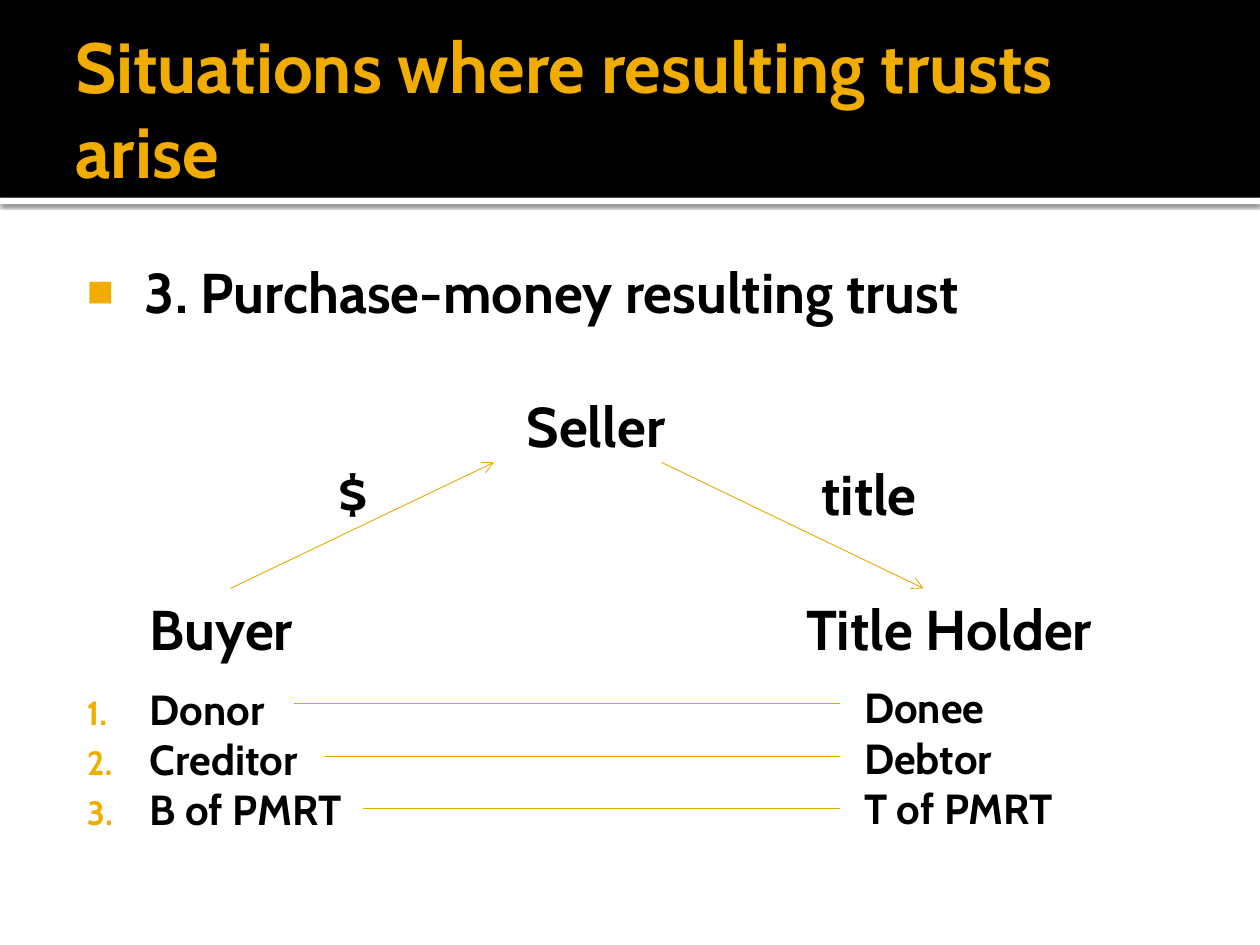
from lxml import etree
from pptx import Presentation
from pptx import util as u
from pptx.dml.color import RGBColor
from pptx.enum import shapes, text
from pptx.oxml.ns import qn

GOLD, BLACK, WHITE, LINE = "F0AD00", "000000", "FFFFFF", "EBA900"


def color(code):
    return RGBColor.from_string(code)


def sub(parent, tag, **attrs):
    return etree.SubElement(parent, qn(tag), {k: str(v) for k, v in attrs.items()})


def write(para, words, size=32, fill=BLACK, font="Cabin", before=0):
    para.alignment = text.PP_ALIGN.LEFT
    para.space_before = u.Pt(before)
    run = para.add_run()
    run.text = words
    run.font.name, run.font.size, run.font.bold = font, u.Pt(size), True
    run.font.color.rgb = color(fill)


def bullet(para, margin, indent, tag, **attrs):
    props = para._p.get_or_add_pPr()
    props.set("marL", str(u.Inches(margin)))
    props.set("indent", str(u.Inches(indent)))
    sub(sub(props, "a:buClr"), "a:srgbClr", val=GOLD)
    sub(props, "a:buSzPct", val=80000)
    sub(props, tag, **attrs)


class Deck:
    def __init__(self):
        self.prs = Presentation()
        self.prs.slide_width, self.prs.slide_height = u.Inches(10), u.Inches(7.5)
        self.slide = self.prs.slides.add_slide(self.prs.slide_layouts[1])
        self.shapes = self.slide.shapes

    def bar(self, top, high, fill, shade=False):
        box = self.shapes.add_shape(shapes.MSO_SHAPE.RECTANGLE, 0, u.Inches(top),
                                    u.Inches(10), u.Inches(high))
        box.shadow.inherit = False
        box.fill.solid()
        box.fill.fore_color.rgb = color(fill)
        box.line.fill.background()
        if shade:
            effects = box._element.spPr.find(qn("a:effectLst"))
            cast = sub(effects, "a:outerShdw", blurRad=u.Pt(2.5), dist=u.Pt(0.8),
                       dir=90 * 60000, algn="tl", rotWithShape=0)
            sub(sub(cast, "a:srgbClr", val=BLACK), "a:alpha", val=60000)

    def holder(self, index, place, inset, anchor):
        """Place a template placeholder above the shapes drawn so far."""
        box = self.slide.placeholders[index]
        box.left, box.top, box.width, box.height = map(u.Inches, place)
        frame = box.text_frame
        frame.auto_size, frame.word_wrap = text.MSO_AUTO_SIZE.NONE, True
        frame.vertical_anchor = anchor
        (frame.margin_left, frame.margin_top,
         frame.margin_right, frame.margin_bottom) = map(u.Inches, inset)
        self.shapes._spTree.append(box._element)
        return frame

    def label(self, left, top, lines, size=32, wide=2.6):
        high = len(lines) * size * 1.22 / 72
        box = self.shapes.add_textbox(*map(u.Inches, (left, top, wide, high)))
        frame = box.text_frame
        frame.word_wrap = True
        frame.margin_left = frame.margin_right = 0
        frame.margin_top = frame.margin_bottom = 0
        for i, words in enumerate(lines):
            para = frame.add_paragraph() if i else frame.paragraphs[0]
            write(para, words, size)

    def line(self, start, end, arrow=False):
        link = self.shapes.add_connector(shapes.MSO_CONNECTOR.STRAIGHT,
                                         *map(u.Inches, (*start, *end)))
        link.line.color.rgb = color(LINE)
        link.line.width = u.Pt(0.5)
        if arrow:
            sub(link.line._get_or_add_ln(), "a:tailEnd", type="arrow")
        sub(link._element.spPr, "a:effectLst")


def main():
    deck = Deck()

    # Header band and title
    deck.bar(1.57, 0.05, WHITE, shade=True)
    deck.bar(0, 1.57, BLACK)
    title = deck.holder(0, (0.5, 0.17, 9, 1.37), (0.1, 0.05, 0.05, 0.05),
                        text.MSO_ANCHOR.MIDDLE)
    write(title.paragraphs[0], "Situations where resulting trusts arise", 40.5, GOLD)

    # Heading, then the numbered roles below the diagram
    body = deck.holder(1, (0.5, 1.94, 9, 5.06), (0.06, 0.1, 0.1, 0.05),
                       text.MSO_ANCHOR.TOP)
    head = body.paragraphs[0]
    bullet(head, 0.59, -0.46, "a:buChar", char="■")
    write(head, "3. Purchase-money resulting trust")
    roles = [("Donor", "Donee", 2.33), ("Creditor", "Debtor", 2.58),
             ("B of PMRT", "T of PMRT", 2.88)]
    for i, (role, _, _) in enumerate(roles):
        para = body.add_paragraph()
        bullet(para, 0.63, -0.5, "a:buAutoNum", type="arabicPeriod")
        write(para, role, 24, before=0 if i else 205)
    deck.label(6.86, 5.41, [pair for _, pair, _ in roles], 24)

    # Diagram labels
    for words, left, top in [("Seller", 4.18, 3.11), ("$", 2.69, 3.65),
                             ("title", 6.52, 3.65), ("Buyer", 1.19, 4.72),
                             ("Title Holder", 6.4, 4.72)]:
        deck.label(left, top, [words])

    # Arrows of the diagram and lines joining the roles
    deck.line((1.83, 4.67), (3.92, 3.67), arrow=True)
    deck.line((5.25, 3.67), (7.33, 4.67), arrow=True)
    for i, (_, _, left) in enumerate(roles):
        y = 5.58 + i * 0.42
        deck.line((left, y), (6.67, y))

    deck.prs.save("out.pptx")


if __name__ == "__main__":
    main()
